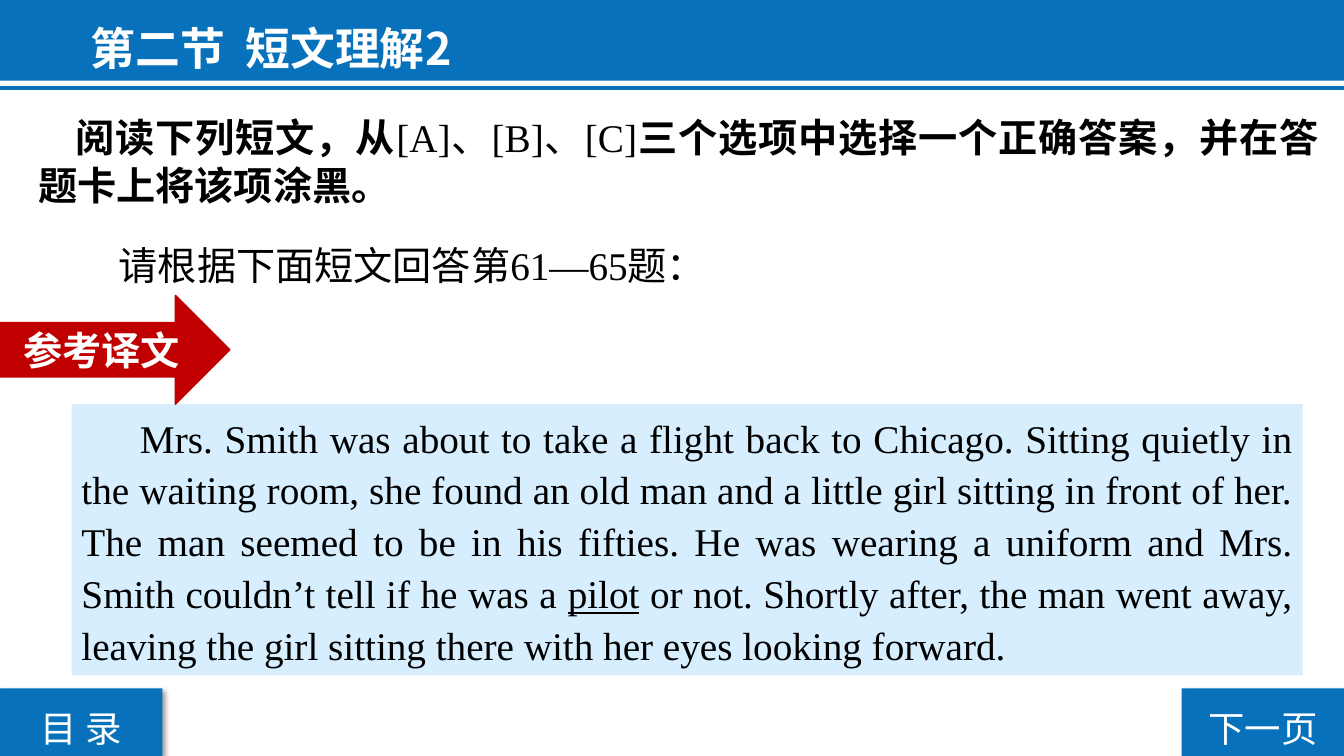
import pptx
import pptx.util
import pptx.dml.color
import pptx.enum.shapes
import pptx.enum.text
import pptx.oxml
import pptx.oxml.ns
import lxml.etree
from dataclasses import dataclass

PX = 9144  # EMU per px, 100 px to the inch
KIND = pptx.enum.shapes.MSO_SHAPE
ALIGN = pptx.enum.text.PP_ALIGN
ANCHOR = pptx.enum.text.MSO_ANCHOR
qn = pptx.oxml.ns.qn

SHADOW = """<a:effectLst xmlns:a="http://schemas.openxmlformats.org/drawingml/2006/main">
<a:outerShdw blurRad="50800" dist="38100" dir="2700000" algn="tl" rotWithShape="0">
<a:srgbClr val="000000"><a:alpha val="40000"/></a:srgbClr></a:outerShdw></a:effectLst>"""


@dataclass
class Theme:
    blue: str = "0772BB"
    pale: str = "D6EEFE"
    red: str = "C00000"
    white: str = "FFFFFF"
    black: str = "000000"
    han: str = "Noto Sans CJK SC"
    roman: str = "Times New Roman"
    head: int = 32
    text: int = 28
    nav: int = 26


def rgb(code):
    return pptx.dml.color.RGBColor.from_string(code)


class Page:
    def __init__(self, deck, theme):
        self.theme = theme
        self.slide = deck.slides.add_slide(deck.slide_layouts[5])
        self.shapes = self.slide.shapes

    def fill(self, shape, runs, size, color, align, space=1.0, indent=0, anchor=ANCHOR.TOP):
        """Fill one paragraph with runs of (text, font, bold, underline)."""
        frame = shape.text_frame
        frame.word_wrap = True
        frame.auto_size = pptx.enum.text.MSO_AUTO_SIZE.NONE
        frame.vertical_anchor = anchor
        para = frame.paragraphs[0]
        para.alignment = align
        para.line_spacing = space
        if indent:
            para._p.get_or_add_pPr().set("indent", str(indent * PX))
        for text, face, bold, under in runs:
            run = para.add_run()
            run.text = text
            font = run.font
            font.size = pptx.util.Pt(size)
            font.bold = bold
            font.underline = under
            font.color.rgb = rgb(color)
            font.name = face
            lxml.etree.SubElement(run._r.get_or_add_rPr(), qn("a:ea")).set("typeface", face)

    def block(self, box, fill, kind=KIND.RECTANGLE, edge=None):
        shape = self.shapes.add_shape(kind, *(n * PX for n in box))
        shape.shadow.inherit = False
        shape.fill.solid()
        shape.fill.fore_color.rgb = rgb(fill)
        if edge:
            shape.line.color.rgb = rgb(edge)
            shape.line.width = pptx.util.Pt(1)
        else:
            shape.line.fill.background()
        return shape

    def rule(self, x1, y1, x2, y2, width):
        line = self.shapes.add_connector(
            pptx.enum.shapes.MSO_CONNECTOR.STRAIGHT, *(n * PX for n in (x1, y1, x2, y2)))
        line.line.color.rgb = rgb(self.theme.blue)
        line.line.width = pptx.util.Pt(width)
        lxml.etree.SubElement(line._element.spPr, qn("a:effectLst"))

    def button(self, box, label):
        shape = self.block(box, self.theme.blue)
        props = shape._element.spPr
        props.replace(props.find(qn("a:effectLst")), lxml.etree.fromstring(SHADOW))
        self.fill(shape, [(label, self.theme.han, False, False)],
                  self.theme.nav, self.theme.white, ALIGN.CENTER, 1.3)

    def title(self, box, label):
        shape = self.shapes.title
        shape.left, shape.top, shape.width, shape.height = (n * PX for n in box)
        node = shape._element
        node.getparent().append(node)  # in front of the band
        self.fill(shape, [(label, self.theme.han, True, False)],
                  self.theme.head, self.theme.white, ALIGN.LEFT, 1.3)

    def text(self, box, runs, indent):
        shape = self.shapes.add_textbox(*(n * PX for n in box))
        self.fill(shape, runs, self.theme.text, self.theme.black, ALIGN.JUSTIFY, indent=indent)

    def panel(self, box, runs, indent):
        shape = self.block(box, self.theme.pale)
        self.fill(shape, runs, self.theme.text, self.theme.black, ALIGN.JUSTIFY, 1.1, indent)

    def arrow(self, box, label):
        red = self.theme.red
        shape = self.block(box, red, KIND.RIGHT_ARROW, red)
        self.fill(shape, [(label, self.theme.han, True, False)], self.theme.text,
                  self.theme.white, ALIGN.CENTER, anchor=ANCHOR.MIDDLE)


def main():
    deck = pptx.Presentation()
    deck.slide_width, deck.slide_height = 1333 * PX, 750 * PX
    theme = Theme()
    page = Page(deck, theme)

    def han(text, bold=False):
        return text, theme.han, bold, False

    def roman(text, under=False):
        return text, theme.roman, False, under

    page.block((-1, 0, 1336, 80), theme.blue)
    page.rule(1335, 87, 0, 87, 3)
    for left, label in ((0, "目 录"), (1172, "下一页")):
        page.button((left, 683, 161, 67), label)
    page.title((80, 0, 912, 80), "第二节  短文理解2")

    page.panel((71, 401, 1221, 269), [
        roman("Mrs. Smith was about to take a flight back to Chicago. Sitting quietly in "
              "the waiting room, she found an old man and a little girl sitting in front "
              "of her. The man seemed to be in his fifties. He was wearing a uniform and "
              "Mrs. Smith couldn’t tell if he was a "),
        roman("pilot", True),
        roman(" or not. Shortly after, the man went away, leaving the girl sitting there "
              "with her eyes looking forward."),
    ], 58)
    page.text((28, 108, 1290, 104), [
        han("阅读下列短文，从", True),
        roman("[A]"), han("、"), roman("[B]"), han("、"), roman("[C]"),
        han("三个选项中选择一个正确答案，并在答题卡上将该项涂黑。", True),
    ], 37)
    page.text((71, 234, 707, 57), [
        han("请根据下面短文回答第"), roman("61—65"), han("题："),
    ], 37)
    page.arrow((0, 293, 228, 108), "参考译文")
    deck.save("out.pptx")


if __name__ == "__main__":
    main()
